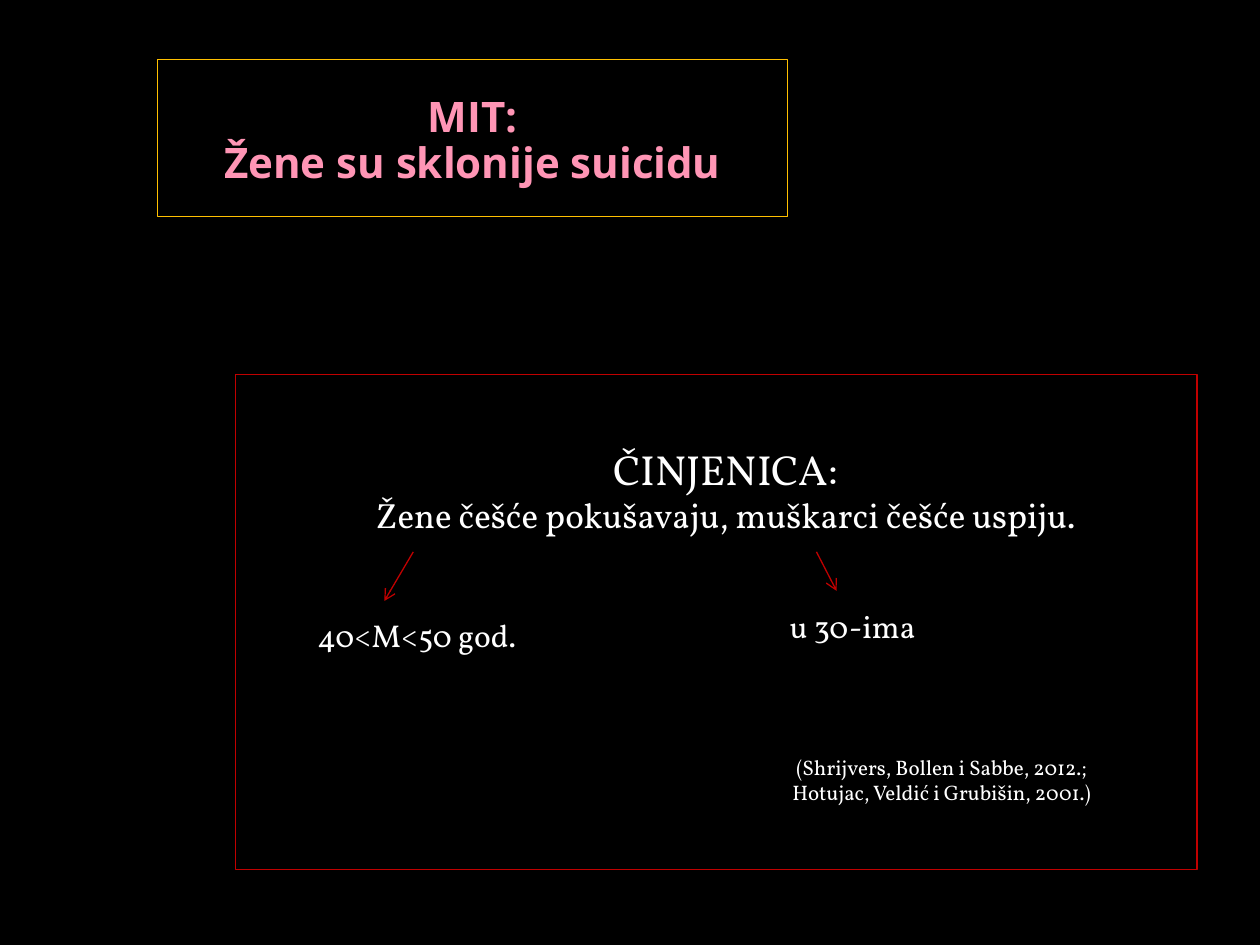
from lxml import etree
from pptx import Presentation
from pptx.dml.color import RGBColor
from pptx.enum.shapes import MSO_CONNECTOR as Connector
from pptx.enum.text import MSO_ANCHOR as Anchor, MSO_AUTO_SIZE as AutoSize, PP_ALIGN as Align
from pptx.oxml.ns import qn
from pptx.util import Inches, Pt

BLACK = RGBColor(0x00, 0x00, 0x00)
WHITE = RGBColor(0xFF, 0xFF, 0xFF)
PINK = RGBColor(0xFF, 0x95, 0xB5)
GOLD = RGBColor(0xFF, 0xC0, 0x00)
RED = RGBColor(0xC0, 0x00, 0x00)

WIDTH, HEIGHT = 10, 7.5
COLS, ROWS = 100, 75  # grid of 0.1 inch cells


class Deck:
    """Holds the style and the current slide; lengths are grid columns and rows."""

    heading_font, text_font = "Open Sans", "Vollkorn"

    def __init__(self):
        self.prs = Presentation()
        self.prs.slide_width, self.prs.slide_height = Inches(WIDTH), Inches(HEIGHT)
        self.slide = self.prs.slides.add_slide(self.prs.slide_layouts[1])
        fill = self.slide.background.fill
        fill.solid()
        fill.fore_color.rgb = BLACK

    def grid(self, *cells):
        steps = self.prs.slide_width / COLS, self.prs.slide_height / ROWS
        return [round(c * steps[i % 2]) for i, c in enumerate(cells)]

    def frame(self, sp, box, color, weight, **frame_format):
        sp.left, sp.top, sp.width, sp.height = self.grid(*box)
        sp.line.color.rgb, sp.line.width = color, Pt(weight)
        tf = sp.text_frame
        tf.word_wrap, tf.auto_size = True, AutoSize.NONE
        for name, value in frame_format.items():
            setattr(tf, name, value)
        return tf

    def put_text(self, p, text, color=WHITE, align=Align.LEFT, **font_format):
        p.text, p.alignment = text, align
        style = {"name": self.text_font, "size": Pt(18), "bold": False} | font_format
        for r in p.runs:
            r.font.color.rgb = color
            for name, value in style.items():
                setattr(r.font, name, value)

    def title(self, text, box):
        tf = self.frame(self.slide.shapes.title, box, GOLD, 0.5,
                        vertical_anchor=Anchor.MIDDLE, margin_top=Inches(0.11))
        p = tf.paragraphs[0]
        self.put_text(p, text, PINK, Align.CENTER,
                      name=self.heading_font, size=Pt(24), bold=True)
        p.line_spacing = 0.9

    def body(self, lines, box):
        tf = self.frame(self.slide.placeholders[1], box, RED, 0.75, vertical_anchor=Anchor.TOP,
                        margin_left=Inches(0.25), margin_top=Inches(0.55))
        for i, (text, size, before, indent) in enumerate(lines):
            p = tf.add_paragraph() if i else tf.paragraphs[0]
            self.put_text(p, text, align=Align.CENTER, size=Pt(size))
            p.space_before = Pt(before)
            pPr = p._p.get_or_add_pPr()
            pPr.set("marL", str(Inches(indent)))
            pPr.set("indent", "0")
            etree.SubElement(pPr, qn("a:buNone"))

    def label(self, text, box):
        tf = self.slide.shapes.add_textbox(*self.grid(*box)).text_frame
        tf.word_wrap = True
        self.put_text(tf.paragraphs[0], text)

    def arrow(self, ends):
        s = self.slide.shapes.add_connector(Connector.STRAIGHT, *self.grid(*ends))
        s.line.color.rgb, s.line.width = RED, Pt(0.75)
        spPr = s._element.spPr
        etree.SubElement(spPr.find(qn("a:ln")), qn("a:tailEnd"), type="arrow")
        etree.SubElement(spPr, qn("a:effectLst"))


def main():
    deck = Deck()

    # Myth
    deck.title("MIT:\vŽene su sklonije suicidu", (12.5, 4.7, 50, 12.5))

    # Fact and its sources: text, size, space before, indent
    deck.body([
        ("ČINJENICA:", 24, 0, 0),
        ("Žene češće pokušavaju, muškarci češće uspiju.", 20, 0, 0),
        ("(Shrijvers, Bollen i Sabbe, 2012.;", 12, 125, 3.43),
        ("Hotujac, Veldić i Grubišin, 2001.)", 12, 0, 3.43),
    ], (18.7, 29.7, 76.3, 39.3))

    # Age groups, each with its arrow
    for text, box, ends in [
        ("40<M<50 god.", (24.2, 48.4, 20.3, 4), (32.8, 43.8, 30.5, 47.7)),
        ("u 30-ima", (61.7, 47.7, 12.5, 4), (64.8, 43.8, 66.4, 46.9)),
    ]:
        deck.label(text, box)
        deck.arrow(ends)

    deck.prs.save("out.pptx")


if __name__ == "__main__":
    main()
